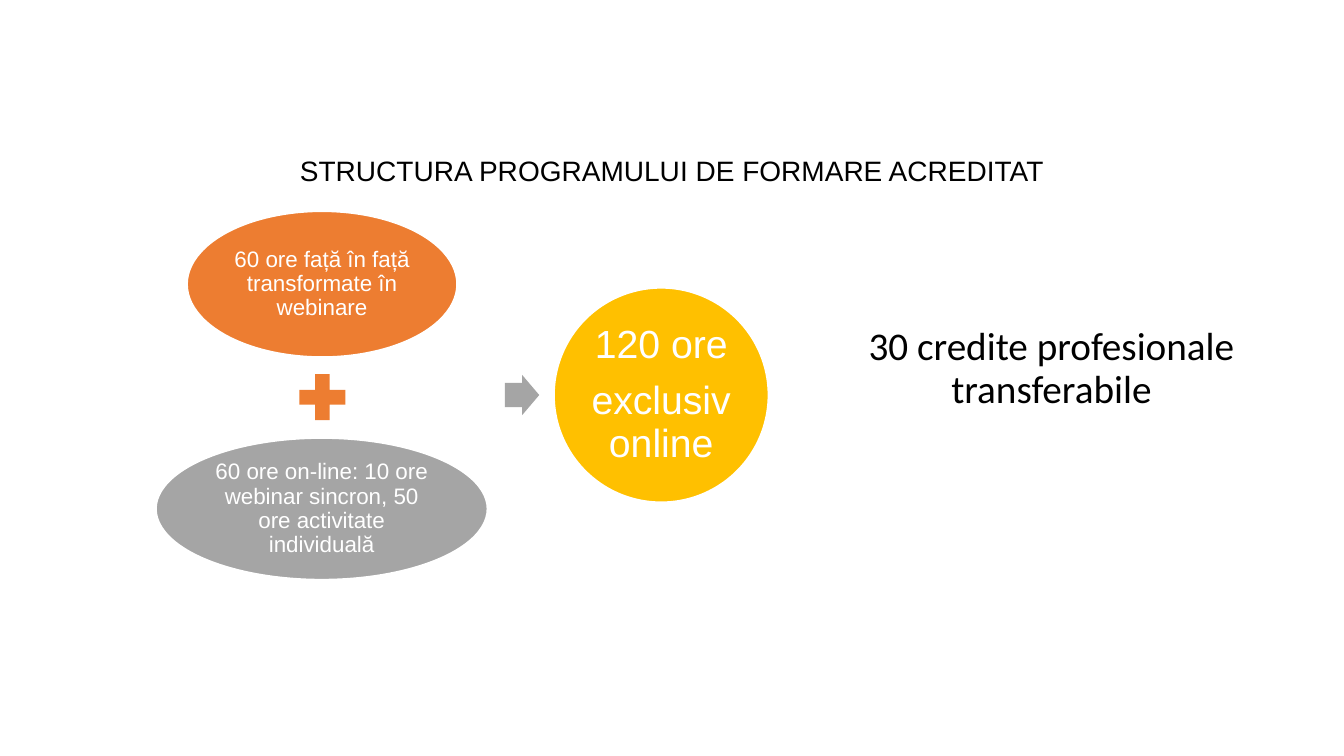
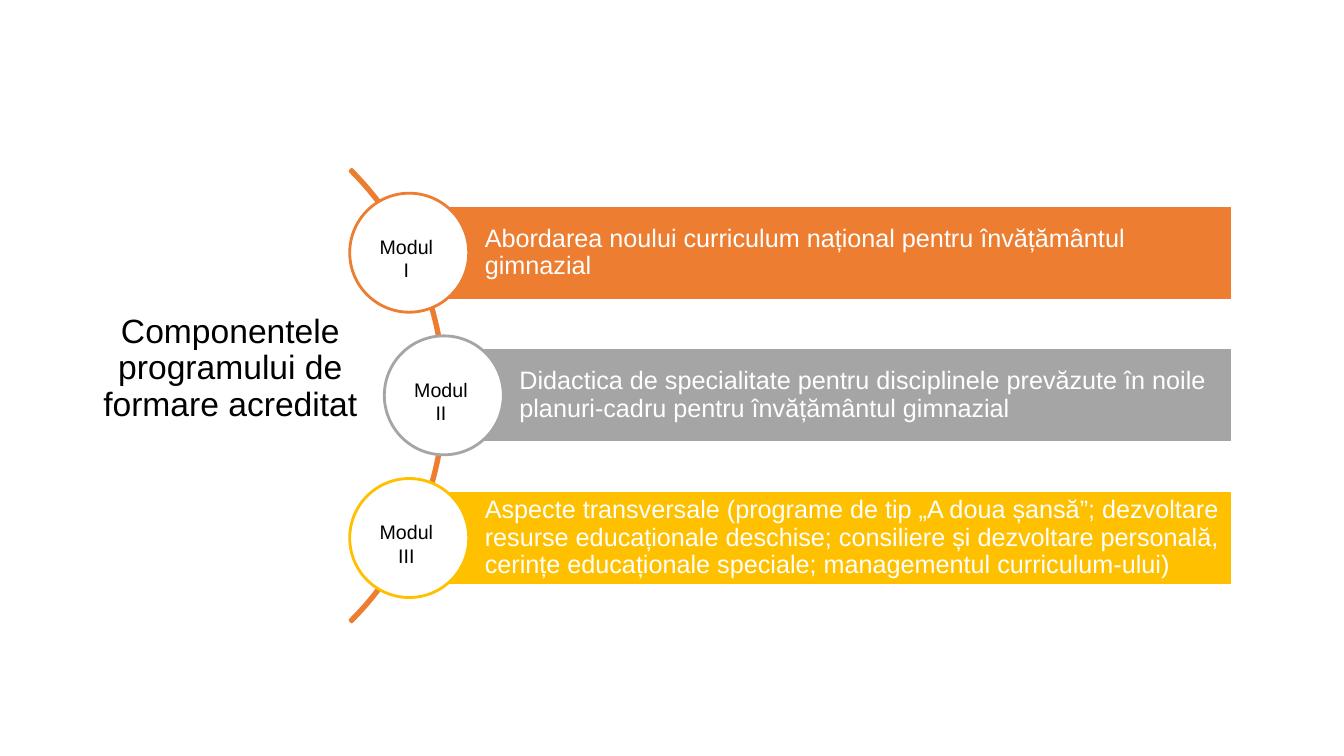
"""Build two slides on the structure and modules of an accredited training programme."""
from dataclasses import dataclass

from pptx import Presentation
from pptx.dml.color import RGBColor
from pptx.enum.shapes import MSO_SHAPE
from pptx.enum.text import MSO_ANCHOR, MSO_AUTO_SIZE, PP_ALIGN
from pptx.util import Pt


@dataclass(frozen=True)
class Theme:
    orange: RGBColor = RGBColor(0xED, 0x7D, 0x31)
    gray: RGBColor = RGBColor(0xA5, 0xA5, 0xA5)
    gold: RGBColor = RGBColor(0xFF, 0xC0, 0x00)
    white: RGBColor = RGBColor(0xFF, 0xFF, 0xFF)
    black: RGBColor = RGBColor(0x00, 0x00, 0x00)
    font: str = "Arial"
    credit_font: str = "Calibri"
    label: int = 14
    hours: int = 16
    module: int = 18
    title: int = 20
    side_title: int = 24
    result: int = 28
    outline: int = 2


theme = Theme()


def write(frame, text, size, color, margins, align=PP_ALIGN.CENTER,
          anchor=MSO_ANCHOR.MIDDLE, font=theme.font, spacing=0.9, gap=0):
    frame.text = text
    frame.word_wrap = True
    frame.auto_size = MSO_AUTO_SIZE.NONE
    frame.vertical_anchor = anchor
    left, top, right, bottom = margins
    frame.margin_left, frame.margin_top = Pt(left), Pt(top)
    frame.margin_right, frame.margin_bottom = Pt(right), Pt(bottom)
    for number, paragraph in enumerate(frame.paragraphs):
        paragraph.alignment = align
        paragraph.line_spacing = spacing
        paragraph.space_before = Pt(gap if number else 0)
        for run in paragraph.runs:
            run.font.name = font
            run.font.size = Pt(size)
            run.font.color.rgb = color


def draw(slide, kind, box, fill=None, line=None):
    shape = slide.shapes.add_shape(kind, *map(Pt, box))
    shape.shadow.inherit = False
    if fill is None:
        shape.fill.background()
    else:
        shape.fill.solid()
        shape.fill.fore_color.rgb = fill
    if line is None:
        shape.line.fill.background()
    else:
        shape.line.color.rgb = line
        shape.line.width = Pt(theme.outline)
    return shape


deck = Presentation()
deck.slide_width, deck.slide_height = Pt(960), Pt(540)
title_only = deck.slide_layouts[5]
text_margins = (7.2, 3.6, 7.2, 3.6)

headings = [
    ("STRUCTURA PROGRAMULUI DE FORMARE ACREDITAT", theme.title,
     (66, 105, 828, 37), MSO_ANCHOR.MIDDLE),
    ("Componentele programului de formare acreditat", theme.side_title,
     (62, 221, 205, 108), MSO_ANCHOR.TOP),
]
slides = []
for heading, size, box, anchor in headings:
    slide = deck.slides.add_slide(title_only)
    title = slide.shapes.title
    title.left, title.top, title.width, title.height = map(Pt, box)
    write(title.text_frame, heading, size, theme.black, text_margins, anchor=anchor)
    slides.append(slide)
structure, components = slides

hours = [
    ("60 ore față în față transformate în webinare", theme.hours,
     theme.orange, (133.2, 150.5, 193.7, 105), 1.4),
    ("60 ore on-line: 10 ore webinar sincron, 50 ore activitate individuală", theme.hours,
     theme.gray, (111, 312.5, 237.6, 102), 1.4),
    ("120 ore\nexclusiv online", theme.result,
     theme.gold, (395.3, 205.2, 154, 154), 2.9),
]
for text, size, color, box, margin in hours:
    oval = draw(structure, MSO_SHAPE.OVAL, box, color, theme.white)
    write(oval.text_frame, text, size, theme.white, [margin] * 4, gap=10)

draw(structure, MSO_SHAPE.MATH_PLUS, (208, 261.4, 44.6, 44.6), theme.orange)
arrow = draw(structure, MSO_SHAPE.RIGHT_ARROW, (360.7, 267.8, 24.5, 28.8), theme.gray)
arrow.adjustments[0] = 0.6

credits = structure.shapes.add_textbox(Pt(608), Pt(230), Pt(286), Pt(106))
write(credits.text_frame, "30 credite profesionale transferabile", theme.result, theme.black,
      text_margins, anchor=MSO_ANCHOR.TOP, font=theme.credit_font)

arc = draw(components, MSO_SHAPE.BLOCK_ARC, (-139, 54, 457.2, 457.2), line=theme.orange)
for number, angle in enumerate((189, 27, 0.004)):
    arc.adjustments[number] = angle

modules = [
    ("I", "Abordarea noului curriculum național pentru învățământul gimnazial",
     theme.orange, 292.3),
    ("II", "Didactica de specialitate pentru disciplinele prevăzute în noile planuri-cadru "
     "pentru învățământul gimnazial", theme.gray, 317),
    ("III", "Aspecte transversale (programe de tip „A doua șansă”; dezvoltare resurse "
     "educaționale deschise; consiliere și dezvoltare personală, cerințe educaționale "
     "speciale; managementul curriculum-ului)", theme.gold, 292.3),
]
bar_right, bar_height, badge_size = 880.6, 67.7, 85
for row, (numeral, text, color, left) in enumerate(modules):
    middle = 282.4 + (row - 1) * 101.9
    bar = draw(components, MSO_SHAPE.RECTANGLE,
               (left, middle - bar_height / 2, bar_right - left, bar_height),
               color, theme.white)
    write(bar.text_frame, text, theme.module, theme.white, (54, 3.6, 3.6, 3.6),
          align=PP_ALIGN.LEFT)
    badge = draw(components, MSO_SHAPE.OVAL,
                 (left - badge_size / 2, middle - badge_size / 2, badge_size, badge_size),
                 theme.white, color)
    write(badge.text_frame, f"Modul\n{numeral}", theme.label, theme.black, (0, 8, 4, 0),
          spacing=1.0)

deck.save("out.pptx")
